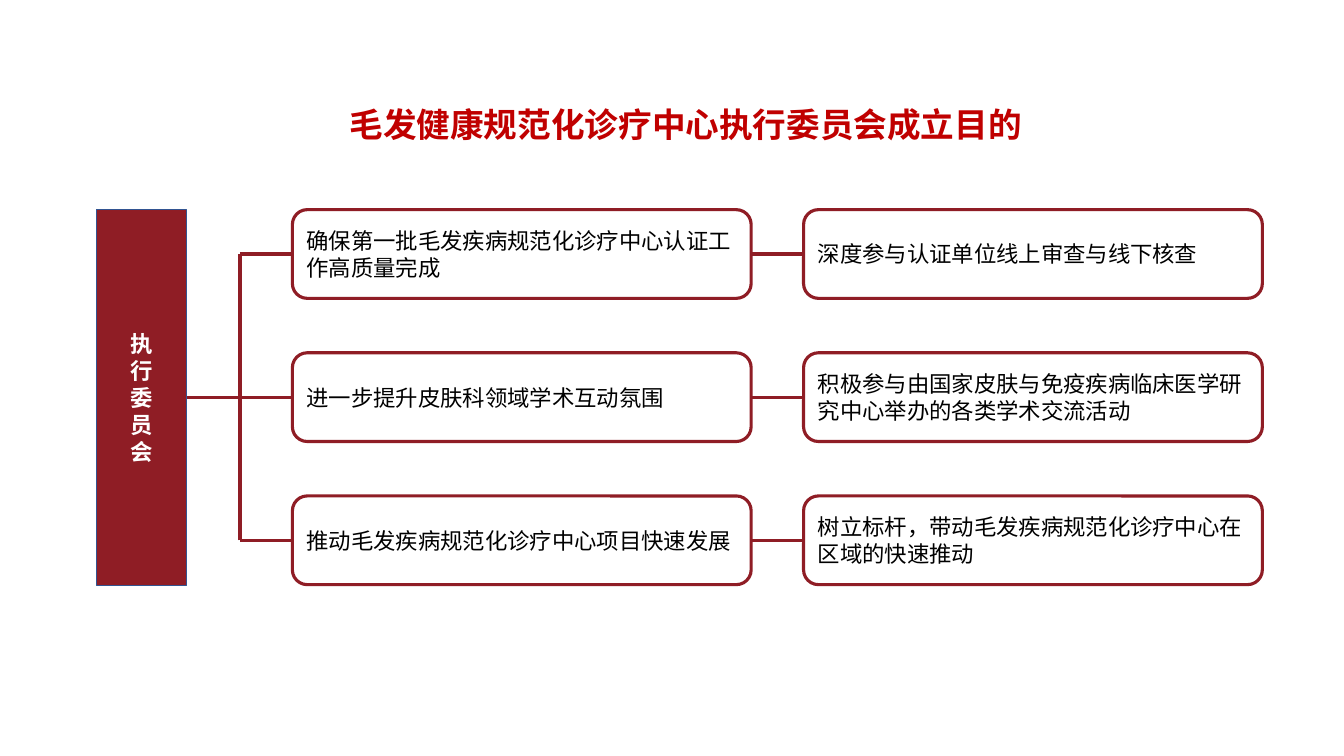
from dataclasses import dataclass

from lxml import etree
from pptx import Presentation
from pptx.dml.color import RGBColor
from pptx.enum.shapes import MSO_CONNECTOR, MSO_SHAPE
from pptx.enum.text import MSO_ANCHOR, MSO_AUTO_SIZE, PP_ALIGN
from pptx.oxml.ns import qn
from pptx.util import Pt

RECTANGLE = MSO_SHAPE.RECTANGLE
ROUNDED = MSO_SHAPE.ROUNDED_RECTANGLE
STRAIGHT = MSO_CONNECTOR.STRAIGHT
TOP, MIDDLE = MSO_ANCHOR.TOP, MSO_ANCHOR.MIDDLE
LEFT, CENTER = PP_ALIGN.LEFT, PP_ALIGN.CENTER
NO_AUTOFIT = MSO_AUTO_SIZE.NONE

EMU_PER_PX = 9144
CRIMSON = "8F1D25"
TITLE_FONT = "Noto Sans CJK SC"
BODY_FONT = "Arial"

TITLE = "毛发健康规范化诊疗中心执行委员会成立目的"
COMMITTEE = "执行委员会"

ROOT_LEFT, ROOT_WIDTH, ROOT_HEIGHT = 96, 89, 373
GOAL_LEFT, ACTION_LEFT = 290, 797
BOX_WIDTH, BOX_HEIGHT = 455, 88
FIRST_TOP, ROW_PITCH = 208, 142
TRUNK_X = 238


@dataclass(frozen=True)
class Row:
    goal: str
    action: str


@dataclass(frozen=True)
class Box:
    left: int
    top: int
    width: int
    height: int


@dataclass(frozen=True)
class Link:
    start_x: int
    start_y: int
    end_x: int
    end_y: int


ROWS = [
    Row("确保第一批毛发疾病规范化诊疗中心认证工作高质量完成",
        "深度参与认证单位线上审查与线下核查"),
    Row("进一步提升皮肤科领域学术互动氛围",
        "积极参与由国家皮肤与免疫疾病临床医学研究中心举办的各类学术交流活动"),
    Row("推动毛发疾病规范化诊疗中心项目快速发展",
        "树立标杆，带动毛发疾病规范化诊疗中心在区域的快速推动"),
]


def px(length: int) -> int:
    return length * EMU_PER_PX


def color(value: str) -> RGBColor:
    return RGBColor.from_string(value)


def add_run(paragraph, text: str, font: str, size: int, ink: str, bold: bool = False):
    run = paragraph.add_run()
    run.text = text
    run.font.name = font
    run.font.size = Pt(size)
    run.font.bold = bold
    run.font.color.rgb = color(ink)
    return run


def set_title(slide) -> None:
    title = slide.shapes.title
    title.left, title.top, title.width, title.height = map(px, (231, 104, 898, 52))
    frame = title.text_frame
    frame.auto_size = NO_AUTOFIT
    frame.word_wrap = True
    frame.vertical_anchor = TOP
    frame.margin_left = frame.margin_right = px(4)
    frame.margin_top = frame.margin_bottom = px(4)
    paragraph = frame.paragraphs[0]
    paragraph.alignment = CENTER
    paragraph.line_spacing = 0.9
    run = add_run(paragraph, TITLE, TITLE_FONT, 24, "C00000", True)
    properties = run._r.get_or_add_rPr()
    etree.SubElement(properties, qn("a:ea"), typeface=TITLE_FONT)


def add_box(slide, kind, box: Box, line: str, line_width: float):
    shape = slide.shapes.add_shape(
        kind, px(box.left), px(box.top), px(box.width), px(box.height))
    shape.shadow.inherit = False
    shape.fill.background()
    shape.line.color.rgb = color(line)
    shape.line.width = Pt(line_width)
    shape.text_frame.word_wrap = True
    shape.text_frame.vertical_anchor = MIDDLE
    return shape


def add_committee(slide) -> None:
    box = Box(ROOT_LEFT, FIRST_TOP, ROOT_WIDTH, ROOT_HEIGHT)
    shape = add_box(slide, RECTANGLE, box, "325491", 1)
    shape.fill.solid()
    shape.fill.fore_color.rgb = color(CRIMSON)
    frame = shape.text_frame
    for index, character in enumerate(COMMITTEE):
        paragraph = frame.add_paragraph() if index else frame.paragraphs[0]
        paragraph.alignment = CENTER
        add_run(paragraph, character, BODY_FONT, 16, "FFFFFF", True)


def add_card(slide, left: int, top: int, text: str) -> None:
    box = Box(left, top, BOX_WIDTH, BOX_HEIGHT)
    shape = add_box(slide, ROUNDED, box, CRIMSON, 2.25)
    paragraph = shape.text_frame.paragraphs[0]
    paragraph.alignment = LEFT
    add_run(paragraph, text, BODY_FONT, 16, "000000")


def add_link(slide, link: Link) -> None:
    connector = slide.shapes.add_connector(
        STRAIGHT, px(link.start_x), px(link.start_y), px(link.end_x), px(link.end_y))
    connector.line.color.rgb = color(CRIMSON)
    connector.line.width = Pt(2.25)
    etree.SubElement(connector._element.spPr, qn("a:effectLst"))


def main() -> None:
    presentation = Presentation()
    presentation.slide_width = px(1333)
    presentation.slide_height = px(750)
    slide = presentation.slides.add_slide(presentation.slide_layouts[5])

    set_title(slide)
    add_committee(slide)

    tops = [FIRST_TOP + index * ROW_PITCH for index in range(len(ROWS))]
    centers = [top + BOX_HEIGHT // 2 for top in tops]
    middle = len(ROWS) // 2
    for index, (row, top, center) in enumerate(zip(ROWS, tops, centers)):
        add_card(slide, GOAL_LEFT, top, row.goal)
        add_card(slide, ACTION_LEFT, top, row.action)
        branch_start = ROOT_LEFT + ROOT_WIDTH if index == middle else TRUNK_X
        add_link(slide, Link(branch_start, center, GOAL_LEFT, center))
        add_link(slide, Link(GOAL_LEFT + BOX_WIDTH, center, ACTION_LEFT, center))
    add_link(slide, Link(TRUNK_X, centers[-1], TRUNK_X, centers[0]))

    presentation.save("out.pptx")


if __name__ == "__main__":
    main()
